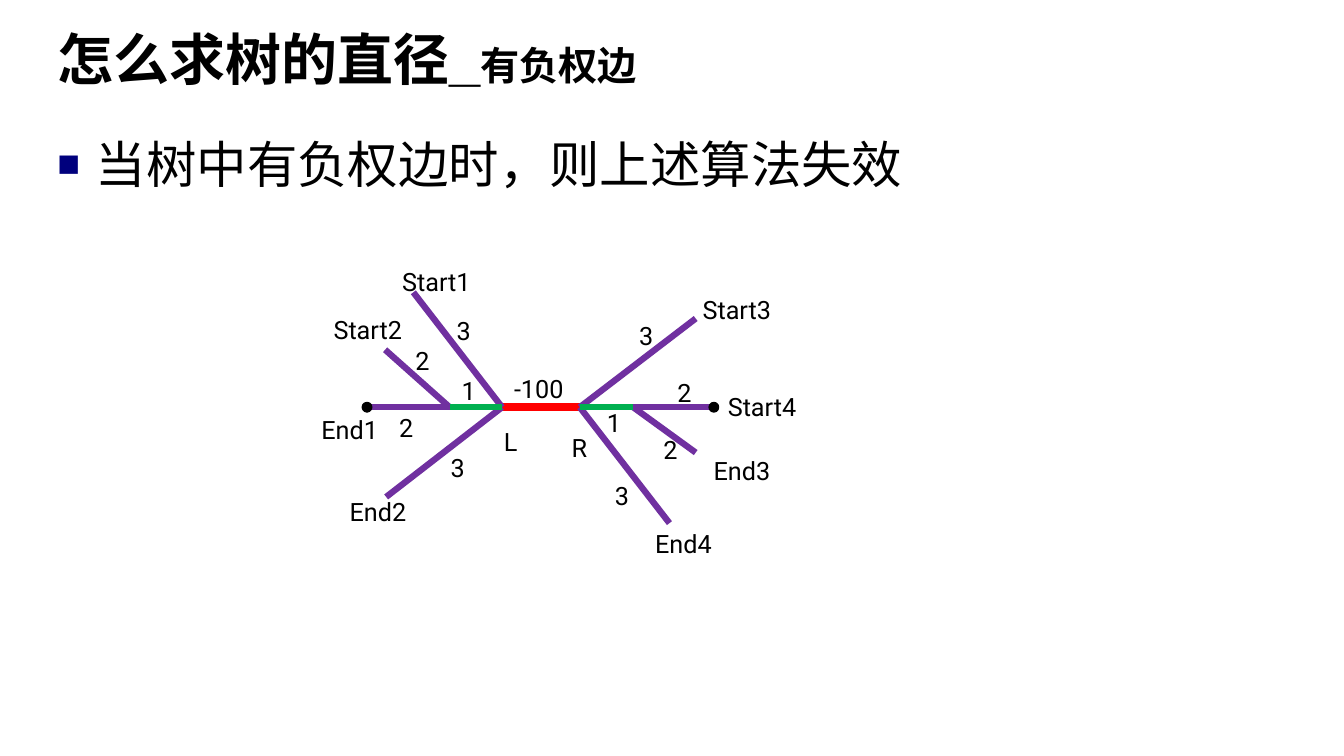
from lxml.etree import SubElement
from pptx import Presentation
from pptx.dml.color import RGBColor
from pptx.enum.shapes import MSO_CONNECTOR, MSO_SHAPE
from pptx.enum.text import MSO_ANCHOR, MSO_AUTO_SIZE, PP_ALIGN
from pptx.oxml.ns import qn
from pptx.util import Inches, Pt

COLORS = {"text": "000000", "bullet": "00007D", "branch": "7030A0",
          "inner": "00B050", "negative": "FF0000"}
TITLE = [("怎么求树的直径_", 40), ("有负权边", 28)]
BODY = "当树中有负权边时，则上述算法失效"

AXIS = 4.04  # height of the horizontal path through the tree
NODES = {
    "L": (4.98, AXIS), "R": (5.75, AXIS),
    "left fork": (4.46, AXIS), "right fork": (6.28, AXIS),
    "Start1": (4.1, 2.9), "Start2": (3.82, 3.47),
    "End1": (3.67, AXIS), "End2": (3.83, 4.93),
    "Start3": (6.9, 3.16), "Start4": (7.04, AXIS),
    "End3": (6.9, 4.49), "End4": (6.64, 5.19),
}
EDGES = [  # from, to, kind, weight, left and top of the weight
    ("L", "R", "negative", "-100", 5, 3.65),
    ("L", "Start1", "branch", "3", 4.43, 3.08),
    ("L", "End2", "branch", "3", 4.37, 4.44),
    ("left fork", "End1", "branch", "2", 3.86, 4.04),
    ("left fork", "Start2", "branch", "2", 4.02, 3.38),
    ("L", "left fork", "inner", "1", 4.48, 3.67),
    ("R", "Start3", "branch", "3", 6.24, 3.13),
    ("R", "End4", "branch", "3", 6, 4.72),
    ("right fork", "Start4", "branch", "2", 6.62, 3.69),
    ("right fork", "End3", "branch", "2", 6.48, 4.26),
    ("R", "right fork", "inner", "1", 5.92, 3.99),
]
NODE_LABELS = [  # name, left, top
    ("Start1", 3.89, 2.59), ("Start2", 3.21, 3.07), ("End1", 3.09, 4.06),
    ("End2", 3.37, 4.87), ("L", 4.9, 4.18), ("R", 5.57, 4.24),
    ("Start3", 6.87, 2.87), ("Start4", 7.12, 3.83), ("End3", 6.98, 4.47),
    ("End4", 6.4, 5.19),
]
DOT = 0.08
DOTS = [(3.6, AXIS - DOT / 2), (7.04, AXIS - DOT / 2)]
LABEL_WIDTHS = {1: 0.48, 4: 0.84, 6: 0.95}  # by number of letters


def color(name):
    return RGBColor.from_string(COLORS[name])


def place(shape, left, top, width, height):
    shape.left, shape.top = Inches(left), Inches(top)
    shape.width, shape.height = Inches(width), Inches(height)


def set_font(paragraph, name, size=None, bold=False):
    font = paragraph.font
    font.name, font.bold = name, bold
    font.color.rgb = color("text")
    if size:
        font.size = Pt(size)


def add_square_bullet(paragraph, indent):
    properties = paragraph._p.get_or_add_pPr()
    properties.set("marL", str(Inches(indent)))
    properties.set("indent", str(-Inches(indent)))
    bullet_color = SubElement(properties, qn("a:buClr"))
    SubElement(bullet_color, qn("a:srgbClr"), val=COLORS["bullet"])
    SubElement(properties, qn("a:buSzPct"), val="75000")
    SubElement(properties, qn("a:buFont"), typeface="Arial")
    SubElement(properties, qn("a:buChar"), char="■")


def add_edge(slide, start, end, kind):
    points = [Inches(value) for value in NODES[start] + NODES[end]]
    line = slide.shapes.add_connector(MSO_CONNECTOR.STRAIGHT, *points)
    line.line.color.rgb = color(kind)
    line.line.width = Pt(6 if kind == "negative" else 4.5)
    SubElement(line._element.spPr, qn("a:effectLst"))


def add_dot(slide, left, top):
    dot = slide.shapes.add_shape(
        MSO_SHAPE.OVAL, Inches(left), Inches(top), Inches(DOT), Inches(DOT))
    dot.shadow.inherit = False
    dot.fill.solid()
    dot.fill.fore_color.rgb = dot.line.color.rgb = color("text")
    dot.line.width = Pt(2)


def add_label(slide, text, left, top):
    box = slide.shapes.add_textbox(
        Inches(left), Inches(top), Inches(LABEL_WIDTHS[len(text)]), Inches(0.4))
    box.text_frame.word_wrap = True
    box.text_frame.text = text
    set_font(box.text_frame.paragraphs[0], "Roboto", 18)


def main():
    presentation = Presentation()
    presentation.slide_width, presentation.slide_height = Inches(13.33), Inches(7.5)
    slide = presentation.slides.add_slide(presentation.slide_layouts[1])

    title, body = slide.placeholders
    place(title, 0.47, 0.11, 12.4, 0.94)
    title.text_frame.auto_size = MSO_AUTO_SIZE.NONE
    title.text_frame.vertical_anchor = MSO_ANCHOR.MIDDLE
    paragraph = title.text_frame.paragraphs[0]
    paragraph.alignment = PP_ALIGN.LEFT
    set_font(paragraph, "Arial", bold=True)
    for text, size in TITLE:
        run = paragraph.add_run()
        run.text = text
        run.font.size = Pt(size)

    place(body, 0.47, 1.27, 9.73, 1.21)
    body.text_frame.auto_size = MSO_AUTO_SIZE.NONE
    body.text_frame.text = BODY
    paragraph = body.text_frame.paragraphs[0]
    add_square_bullet(paragraph, 0.38)
    paragraph.space_before = Pt(0)
    set_font(paragraph, "Noto Sans CJK SC", 36)
    SubElement(paragraph.font._element, qn("a:ea"), typeface="Noto Sans CJK SC")

    for start, end, kind, *_ in EDGES:
        add_edge(slide, start, end, kind)
    for left, top in DOTS:
        add_dot(slide, left, top)
    for *_, weight, left, top in EDGES:
        add_label(slide, weight, left, top)
    for name, left, top in NODE_LABELS:
        add_label(slide, name, left, top)

    presentation.save("out.pptx")


if __name__ == "__main__":
    main()
